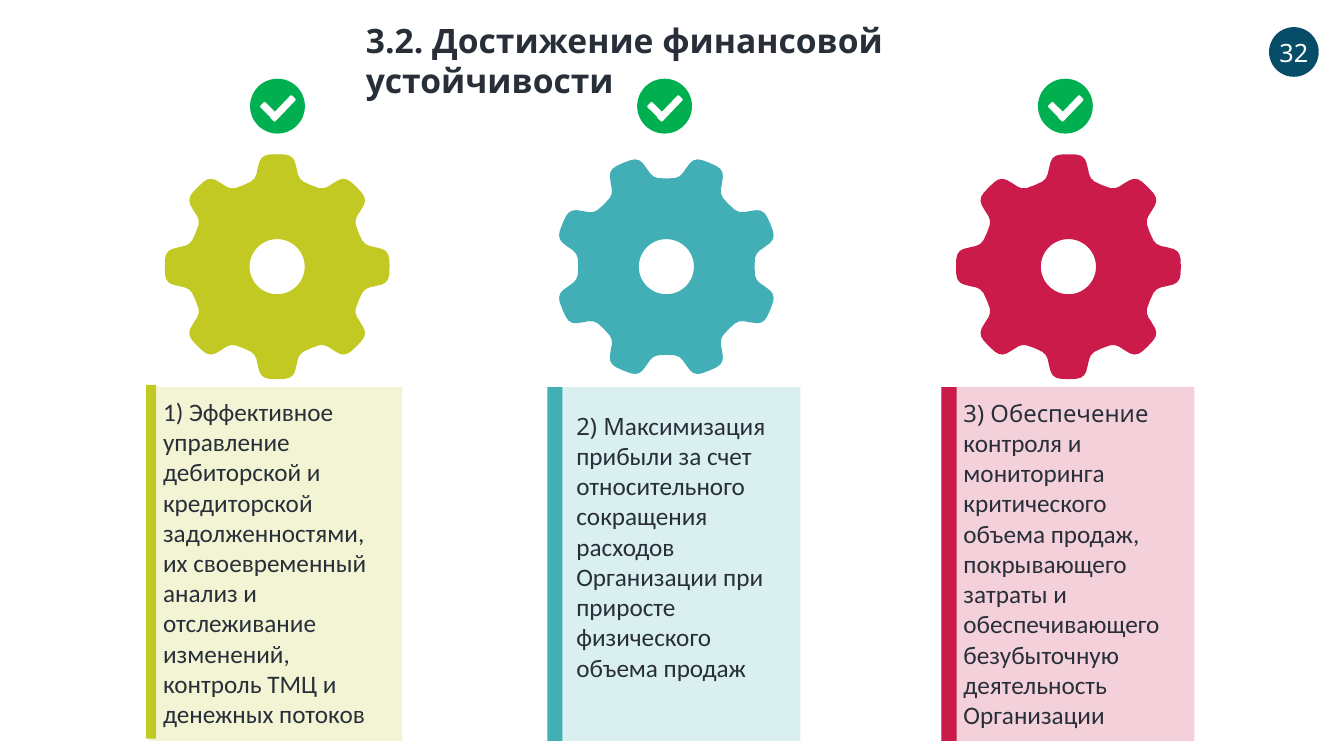
import math

from lxml import etree
from pptx import Presentation
from pptx.dml.color import RGBColor
from pptx.enum.shapes import MSO_SHAPE
from pptx.enum.text import MSO_ANCHOR, MSO_AUTO_SIZE, PP_ALIGN
from pptx.oxml.ns import qn
from pptx.util import Pt

RECTANGLE, OVAL = MSO_SHAPE.RECTANGLE, MSO_SHAPE.OVAL
ROUNDED = MSO_SHAPE.ROUNDED_RECTANGLE
LEFT, CENTER = PP_ALIGN.LEFT, PP_ALIGN.CENTER
TOP, MIDDLE = MSO_ANCHOR.TOP, MSO_ANCHOR.MIDDLE
GROW = MSO_AUTO_SIZE.SHAPE_TO_FIT_TEXT

# Content
TITLE = "3.2. Достижение финансовой устойчивости"
PAGE_NUMBER = "32"
GOALS = [
    dict(lead="", lead_size=18,
         body="1) Эффективное управление дебиторской и кредиторской "
              "задолженностями, их своевременный анализ и отслеживание "
              "изменений, контроль ТМЦ и денежных потоков",
         color="C2C923", panel_left=106.6, bar=(104.4, 275, 7.2),
         text_at=(109.4, 279.4), gear_x=198, turn=0, badge_x=198.2),
    dict(lead="2) М", lead_size=17,
         body="аксимизация прибыли за счет относительного сокращения "
              "расходов Организации при приросте физического объема продаж",
         color="42AFB6", panel_left=391, bar=(391, 276.5, 10.8),
         text_at=(404.6, 289.4), gear_x=476, turn=337.5, badge_x=474.7),
    dict(lead="3) Обеспечение ", lead_size=17,
         body=" контроля и мониторинга критического объема продаж, "
              "покрывающего затраты и обеспечивающего безубыточную "
              "деятельность Организации",
         color="CB1B4A", panel_left=672.5, bar=(672.5, 276.5, 10.8),
         text_at=(681.1, 280.1), gear_x=763.2, turn=0, badge_x=761),
]

THEME = dict(text="282F39", white="FFFFFF", number="074D67", check="00B050",
             heading_font="Noto Sans", body_font="Calibri",
             title_size=24, body_size=18, panel_opacity=20)

# Geometry in points
PANEL_TOP, PANEL_WIDTH, PANEL_HEIGHT = 276.5, 180.7, 252.7
TEXT_WIDTH, TEXT_HEIGHT = 171.4, 246
GEAR_Y, HOLE_RADIUS, TEETH = 190.5, 19.7, 8
BADGE_TOP, BADGE_SIZE = 56.2, 39.2
# Half a tooth, from its tip to the valley: (degrees, radius)
HALF_TOOTH = [(0, 80.3), (4, 80.3), (6.3, 79.8), (8.2, 78.4), (9.6, 76),
              (11.3, 71.3), (12.6, 67.7), (14.4, 65.1), (17, 63.6), (22.5, 63)]
# Check mark strokes inside a badge: left, top, width, height, turn, rounding
CHECK_STROKES = [(11.5, 15.8, 5, 15.1, 314.7, 0.19),
                 (21, 10.1, 5, 22.3, 43.6, 0.21)]
UNITS_PER_POINT = 100

presentation = Presentation()
presentation.slide_width, presentation.slide_height = Pt(960), Pt(540)
slide = presentation.slides.add_slide(presentation.slide_layouts[6])


def paint(shape, color, opacity=100):
    shape.shadow.inherit = False
    shape.fill.solid()
    shape.fill.fore_color.rgb = RGBColor.from_string(color)
    shape.line.fill.background()
    if opacity < 100:
        color_element = shape.element.spPr.find(".//" + qn("a:srgbClr"))
        alpha = etree.SubElement(color_element, qn("a:alpha"))
        alpha.set("val", str(opacity * 1000))


def add_block(kind, left, top, width, height, color, opacity=100):
    shape = slide.shapes.add_shape(kind, Pt(left), Pt(top), Pt(width), Pt(height))
    paint(shape, color, opacity)
    return shape


def write(shape, runs, align=LEFT, anchor=TOP, wrap=True, grow=True,
          color=THEME["text"], bold=False):
    """Fill a shape with one paragraph of (text, font, size) runs."""
    frame = shape.text_frame
    frame.word_wrap, frame.vertical_anchor = wrap, anchor
    if grow:
        frame.auto_size = GROW
    paragraph = frame.paragraphs[0]
    paragraph.alignment = align
    for text, font, size in runs:
        run = paragraph.add_run()
        run.text = text
        run.font.name, run.font.size, run.font.bold = font, Pt(size), bold
        run.font.color.rgb = RGBColor.from_string(color)


def polar(degrees, radius):
    angle = math.radians(degrees)
    return (round(radius * math.sin(angle) * UNITS_PER_POINT),
            round(-radius * math.cos(angle) * UNITS_PER_POINT))


def add_gear(center_x, center_y, color, turn):
    falling = HALF_TOOTH[1:]
    rising = [(-degrees, radius) for degrees, radius in reversed(HALF_TOOTH[:-1])]
    pitch = 360 / TEETH
    outline = [polar(tooth * pitch + degrees, radius)
               for tooth in range(TEETH)
               for degrees, radius in falling + [(pitch + d, r) for d, r in rising]]
    hole = [polar(-degrees, HOLE_RADIUS) for degrees in range(0, 360, 5)]
    builder = slide.shapes.build_freeform(*outline[-1], scale=Pt(1) / UNITS_PER_POINT)
    builder.add_line_segments(outline[:-1], close=True)
    builder.move_to(*hole[0])
    builder.add_line_segments(hole[1:], close=True)
    gear = builder.convert_to_shape(Pt(center_x), Pt(center_y))
    gear.rotation = turn
    paint(gear, color)


def add_badge(center_x):
    left = center_x - BADGE_SIZE / 2
    add_block(OVAL, left, BADGE_TOP, BADGE_SIZE, BADGE_SIZE, THEME["check"])
    for dx, dy, width, height, turn, rounding in CHECK_STROKES:
        stroke = add_block(ROUNDED, left + dx, BADGE_TOP + dy, width, height,
                           THEME["white"])
        stroke.rotation = turn
        stroke.adjustments[0] = rounding


# Title and page number
title = slide.shapes.add_textbox(Pt(254.2), Pt(10.8), Pt(494), Pt(36))
write(title, [(TITLE, THEME["heading_font"], THEME["title_size"])], bold=True)
number = add_block(OVAL, 906.5, 19.4, 35.5, 35.5, THEME["number"])
write(number, [(PAGE_NUMBER, THEME["heading_font"], THEME["body_size"])],
      align=CENTER, anchor=MIDDLE, wrap=False, grow=False, color=THEME["white"])

# One column per goal: panel, text, bar, gear and check badge
for goal in GOALS:
    add_block(RECTANGLE, goal["panel_left"], PANEL_TOP, PANEL_WIDTH, PANEL_HEIGHT,
              goal["color"], THEME["panel_opacity"])
    text_left, text_top = goal["text_at"]
    box = slide.shapes.add_textbox(Pt(text_left), Pt(text_top),
                                   Pt(TEXT_WIDTH), Pt(TEXT_HEIGHT))
    runs = [(goal["lead"], THEME["heading_font"], goal["lead_size"]),
            (goal["body"], THEME["body_font"], THEME["body_size"])]
    write(box, [run for run in runs if run[0]])
    bar_left, bar_top, bar_width = goal["bar"]
    add_block(RECTANGLE, bar_left, bar_top, bar_width, PANEL_HEIGHT, goal["color"])
    add_gear(goal["gear_x"], GEAR_Y, goal["color"], goal["turn"])
    add_badge(goal["badge_x"])

presentation.save("out.pptx")
